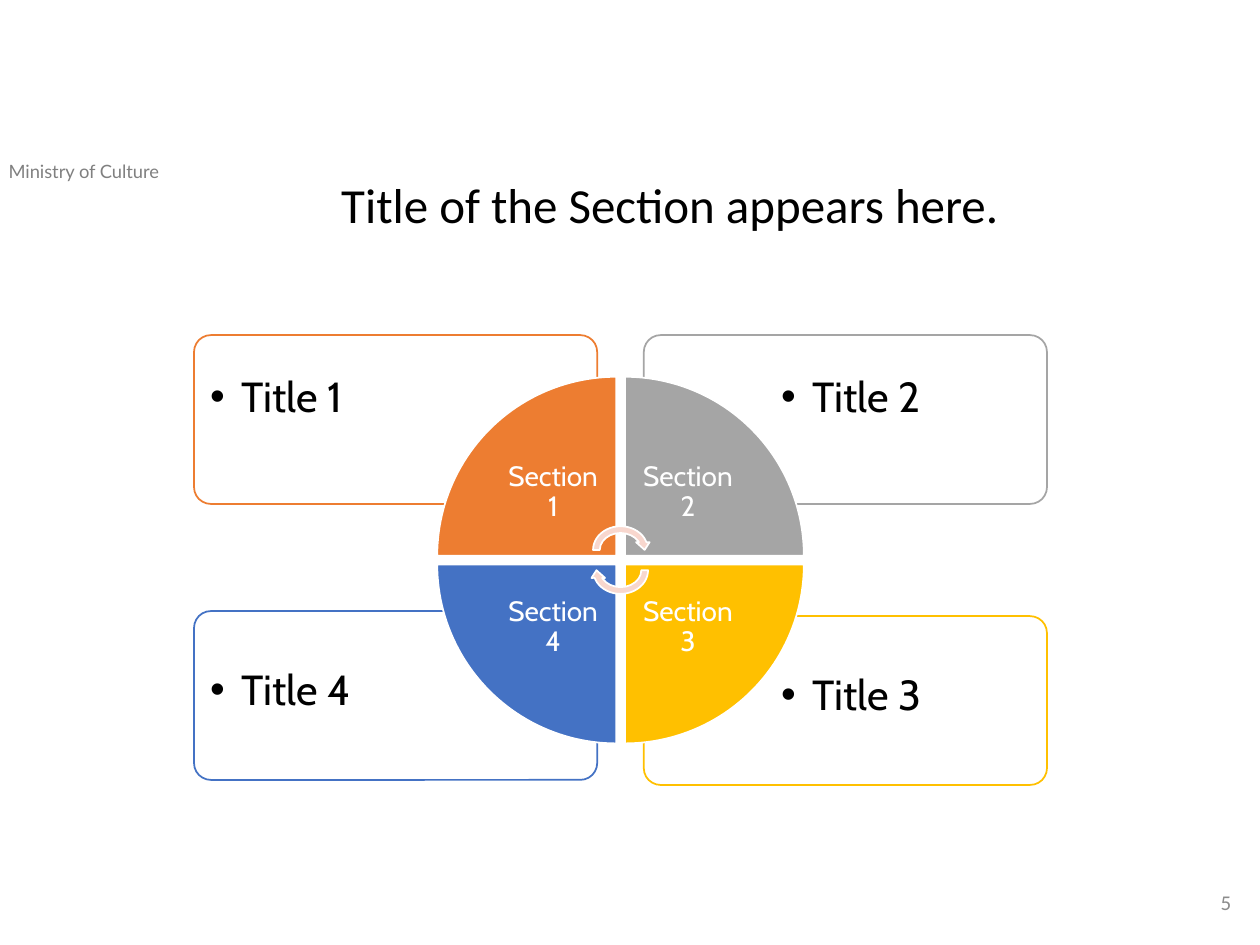
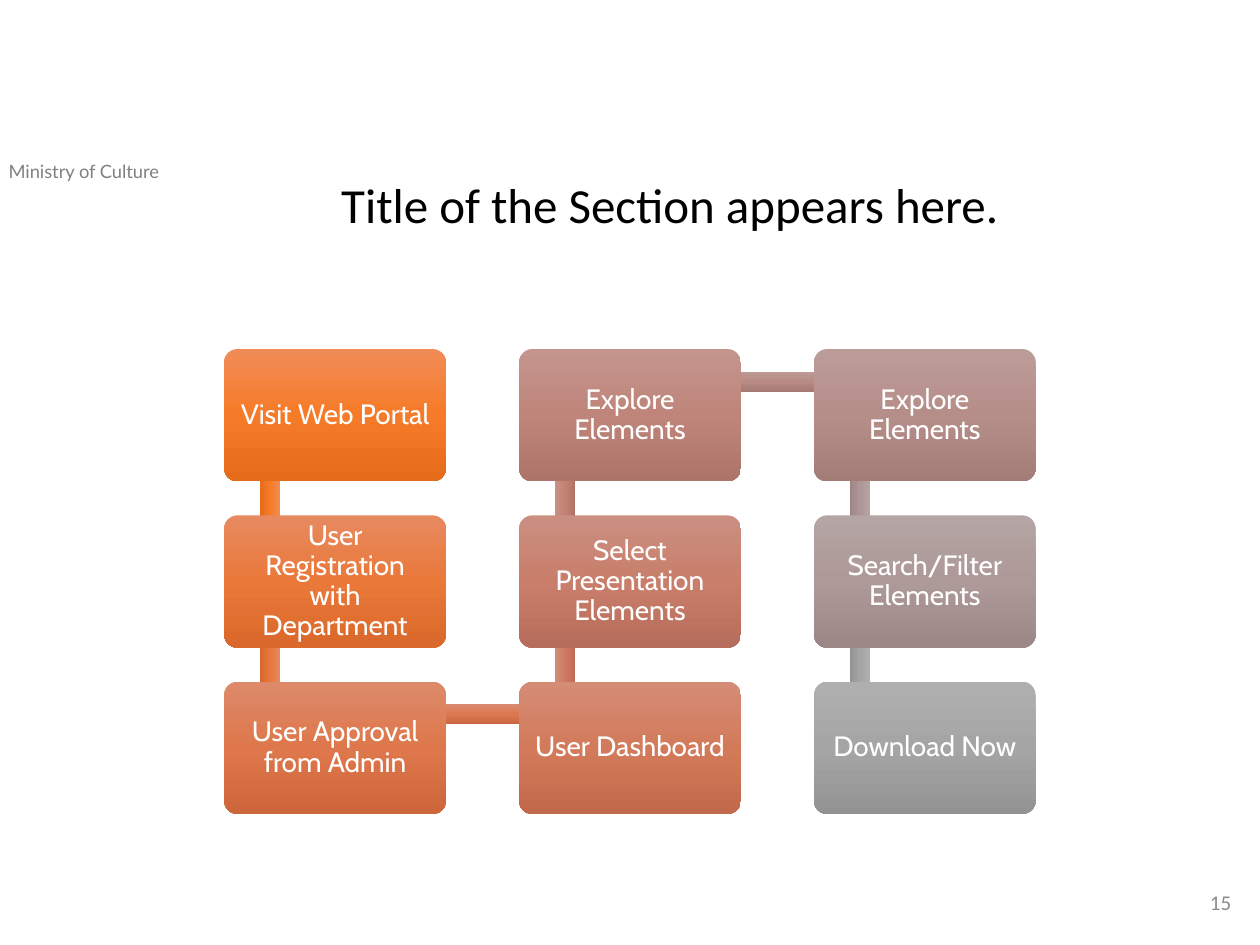
"""Builds two section slides: a four-part cycle and a nine-step snake process."""
from math import atan2, degrees, hypot

from lxml import etree
from pptx import Presentation
from pptx.dml.color import RGBColor
from pptx.enum.shapes import MSO_SHAPE
from pptx.enum.text import MSO_ANCHOR, PP_ALIGN
from pptx.oxml.ns import qn
from pptx.util import Inches, Pt

RECTANGLE = MSO_SHAPE.RECTANGLE
ROUNDED = MSO_SHAPE.ROUNDED_RECTANGLE
WEDGE = MSO_SHAPE.PIE_WEDGE
CIRCULAR_ARROW = MSO_SHAPE.CIRCULAR_ARROW
LEFT, CENTER, RIGHT = PP_ALIGN.LEFT, PP_ALIGN.CENTER, PP_ALIGN.RIGHT
TOP, MIDDLE = MSO_ANCHOR.TOP, MSO_ANCHOR.MIDDLE

GRID_COLUMNS, GRID_ROWS = 100, 75
CELL = Inches(0.1)

COLORS = {
    "black": "000000",
    "white": "FFFFFF",
    "header": "808080",
    "number": "8C8C8C",
    "arrow": "F8D7CE",
    "section 1": "ED7D31",
    "section 2": "A5A5A5",
    "section 3": "FFC000",
    "section 4": "4472C4",
}

GRADIENTS = {
    "step": [
        ("F18C57", "F67B28", "E56C19"), ("E78A60", "EA7839", "D9682A"),
        ("DD8A6A", "DE774B", "CD673B"), ("D48C76", "D37A5B", "C2694B"),
        ("CB8F81", "C97E6B", "B76D5B"), ("C3958D", "BF857B", "AD7469"),
        ("BC9C99", "B68E89", "A47C78"), ("B5A5A4", "AD9998", "9B8786"),
        ("AFAFAF", "A5A5A5", "939393"),
    ],
    "link": [
        ("F18C57", "F67B28", "E56C19"), ("E58A61", "E8783C", "D7682C"),
        ("DA8A6E", "DB7850", "CA673F"), ("D08D7B", "CF7B62", "BD6B52"),
        ("C79288", "C38274", "B17163"), ("BE9A95", "B88B85", "A67A74"),
        ("B6A4A2", "AE9796", "9C8584"), ("AFAFAF", "A5A5A5", "939393"),
    ],
}

STEPS = [
    "Visit Web Portal",
    "User Registration with Department",
    "User Approval from Admin",
    "User Dashboard",
    "Select Presentation Elements",
    "Explore Elements",
    "Explore Elements",
    "Search/Filter Elements",
    "Download Now",
]


def cells(*lengths):
    """Turn grid lengths into slide units."""
    return [round(length * CELL) for length in lengths]


def add_bullet(paragraph):
    """Give a paragraph a hanging round bullet."""
    properties = paragraph._p.get_or_add_pPr()
    properties.set("marL", str(Inches(0.25)))
    properties.set("indent", str(-Inches(0.25)))
    etree.SubElement(properties, qn("a:buFont")).set("typeface", "Arial")
    etree.SubElement(properties, qn("a:buChar")).set("char", "•")


def add_text(slide, box, text, font, size, color, align=LEFT, anchor=TOP,
             inset=None, spacing=None, bullet=False):
    """Add a wrapped one-paragraph text box."""
    frame = slide.shapes.add_textbox(*cells(*box)).text_frame
    frame.word_wrap = True
    frame.vertical_anchor = anchor
    if inset is not None:
        frame.margin_left = frame.margin_right = Inches(inset)
        frame.margin_top = frame.margin_bottom = Inches(inset)
    paragraph = frame.paragraphs[0]
    paragraph.text = text
    if bullet:
        add_bullet(paragraph)
    paragraph.alignment = align
    if spacing:
        paragraph.line_spacing = spacing
    paragraph.font.name = font
    paragraph.font.size = Pt(size)
    paragraph.font.color.rgb = RGBColor.from_string(COLORS[color])


def add_plain_shape(slide, kind, box, line=None, rotation=0):
    """Add a shape without shadow, with a thin line if a colour is named."""
    shape = slide.shapes.add_shape(kind, *cells(*box))
    shape.shadow.inherit = False
    shape.rotation = rotation
    if kind == ROUNDED:
        shape.adjustments[0] = 0.1
    if line:
        shape.line.color.rgb = RGBColor.from_string(COLORS[line])
        shape.line.width = Pt(1)
    else:
        shape.line.fill.background()
    return shape


def fill_solid(shape, color, opacity=100):
    """Fill a shape with one colour."""
    shape.fill.solid()
    shape.fill.fore_color.rgb = RGBColor.from_string(COLORS[color])
    if opacity < 100:
        color_element = shape._element.spPr.find(f".//{qn('a:srgbClr')}")
        etree.SubElement(color_element, qn("a:alpha")).set("val", str(opacity * 1000))


def fill_gradient(shape, stops):
    """Fill a shape from top to bottom with evenly spaced colour stops."""
    shape.fill.gradient()
    shape.fill.gradient_angle = 270
    stop_list = shape._element.spPr.find(f".//{qn('a:gsLst')}")
    for stop in list(stop_list):
        stop_list.remove(stop)
    for index, color in enumerate(stops):
        stop = etree.SubElement(stop_list, qn("a:gs"))
        stop.set("pos", str(index * 100000 // (len(stops) - 1)))
        etree.SubElement(stop, qn("a:srgbClr")).set("val", color)


def add_section_slide(presentation, number):
    """Add a slide with the shared header, title and page number."""
    slide = presentation.slides.add_slide(presentation.slide_layouts[6])
    add_text(slide, (-0.3, 12.2, 21.8, 2.8), "Ministry of Culture", "Lato", 10.5, "header")
    add_text(slide, (76.2, 69.6, 22.5, 4), str(number), "Calibri", 12, "number",
             RIGHT, MIDDLE)
    add_text(slide, (26.1, 13.9, 63.8, 7.9), "Title of the Section appears here.",
             "Calibri", 28, "black", spacing=0.9)
    return slide


def add_label(slide, box, text, inset):
    """Add a white centred label."""
    add_text(slide, box, text, "Cabin", 16, "white", CENTER, MIDDLE, inset, 0.9)


def add_panel(slide, number, left, top, text_left, text_drop, anchor):
    """Add an outlined panel with its bulleted title."""
    panel = add_plain_shape(slide, ROUNDED, (left, top, 32, 13.4), f"section {number}")
    fill_solid(panel, "white", 90)
    add_text(slide, (left + text_left, top + text_drop, 21.8, 9.5), f"Title {number}",
             "Cabin", 24, "black", anchor=anchor, inset=0.1, spacing=0.9, bullet=True)


def add_wedge(slide, number, column, row):
    """Add one quarter of the circle with its label at the inner corner."""
    size, pitch, label = 14.2, 14.9, 10
    left, top = 34.7 + column * pitch, 29.9 + row * pitch
    wedge = add_plain_shape(slide, WEDGE, (left, top, size, size), "white",
                            (number - 1) * 90)
    fill_solid(wedge, f"section {number}")
    label_left = left + (1 - column) * (size - label)
    label_top = top + (1 - row) * (size - label)
    add_label(slide, (label_left, label_top, label, label), f"Section {number}", 0.12)


def add_cycle(slide):
    """Draw the four panels, the quartered circle and its two arrows."""
    add_panel(slide, 1, 15.4, 26.6, 0.3, 0.3, MIDDLE)
    add_panel(slide, 2, 51.1, 26.6, 9.9, 0.3, MIDDLE)
    add_panel(slide, 3, 51.1, 48.9, 9.9, 3.6, TOP)
    add_panel(slide, 4, 15.4, 48.5, 0.3, 3.6, TOP)
    for number, (column, row) in enumerate([(0, 0), (1, 0), (1, 1), (0, 1)], 1):
        add_wedge(slide, number, column, row)
    for top, rotation in [(41.5, 0), (43.1, 180)]:
        arrow = add_plain_shape(slide, CIRCULAR_ARROW, (46.8, top, 4.9, 4.3), "white",
                                rotation)
        fill_solid(arrow, "arrow")


def step_corner(index):
    """Return the left and top of a step, going down and up by columns of three."""
    column, row = divmod(index, 3)
    if column % 2:
        row = 2 - row
    return 17.8 + column * 23.4, 27.7 + row * 13.2


def add_link(slide, index):
    """Add the bar from one step to the next."""
    thickness = 1.6
    left, top = step_corner(index)
    next_left, next_top = step_corner(index + 1)
    across, down = next_left - left, next_top - top
    length = hypot(across, down)
    center_x, center_y = left + across / 2 + 3.65, top + down / 2 + 2.6
    box = (center_x - length / 2, center_y - thickness / 2, length, thickness)
    link = add_plain_shape(slide, RECTANGLE, box, rotation=degrees(atan2(down, across)))
    fill_gradient(link, GRADIENTS["link"][index])


def add_process(slide):
    """Draw the steps, each over the bar that leads on from it."""
    for index, text in enumerate(STEPS):
        if index < len(STEPS) - 1:
            add_link(slide, index)
        left, top = step_corner(index)
        step = add_plain_shape(slide, ROUNDED, (left, top, 17.6, 10.5))
        fill_gradient(step, GRADIENTS["step"][index])
        add_label(slide, (left + 0.3, top + 0.3, 17, 9.9), text, 0.07)


def main():
    """Build and save the presentation."""
    presentation = Presentation()
    presentation.slide_width = GRID_COLUMNS * CELL
    presentation.slide_height = GRID_ROWS * CELL
    add_cycle(add_section_slide(presentation, 5))
    add_process(add_section_slide(presentation, 15))
    presentation.save("out.pptx")


if __name__ == "__main__":
    main()
